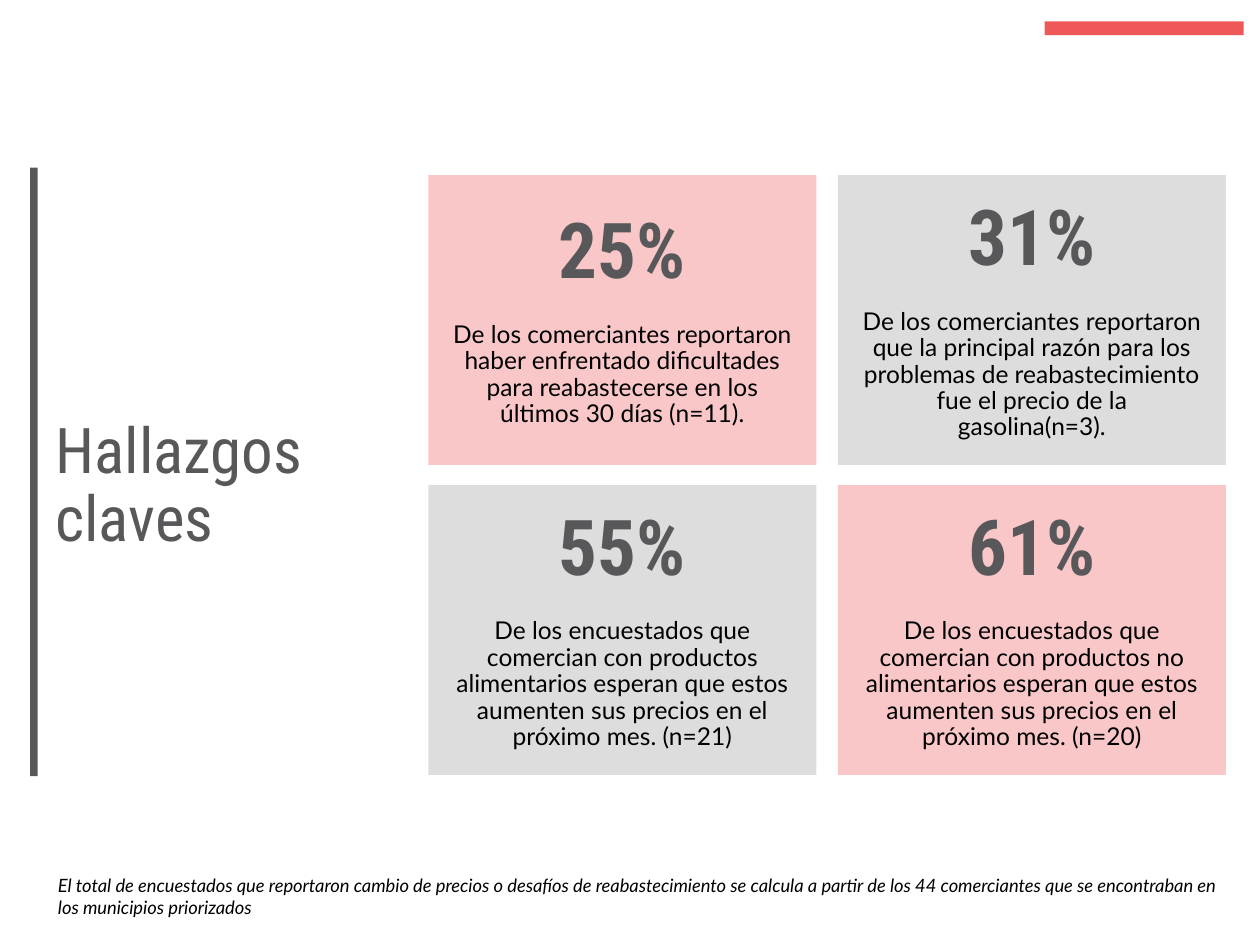
import pptx
import pptx.util
import pptx.dml.color
import pptx.enum.shapes
import pptx.enum.text
import pptx.oxml
import pptx.oxml.ns

Inches = pptx.util.Inches
Pt = pptx.util.Pt
ALIGN = pptx.enum.text.PP_ALIGN
ANCHOR = pptx.enum.text.MSO_ANCHOR

COLORS = {"gray": "58585A", "red": "EE5859", "black": "000000"}
TITLE = {"name": "Roboto Condensed", "size": Pt(36), "bold": False}
NUMBER = {"name": "Roboto Condensed", "size": Pt(44), "bold": True}
BODY = {"name": "Lato", "size": Pt(14), "bold": False}
NOTE = {"name": "Lato", "size": Pt(10.5), "italic": True}

CARDS = [
    ("25%", "De los comerciantes reportaron haber enfrentado dificultades "
            "para reabastecerse en los últimos 30 días (n=11)."),
    ("31%", "De los comerciantes reportaron que la principal razón para los "
            "problemas de reabastecimiento fue el precio de la gasolina(n=3)."),
    ("55%", "De los encuestados que comercian con productos alimentarios "
            "esperan que estos aumenten sus precios en el próximo mes. (n=21)"),
    ("61%", "De los encuestados que comercian con productos no alimentarios "
            "esperan que estos aumenten sus precios en el próximo mes. (n=20)"),
]
FOOTER = ("El total de encuestados que reportaron cambio de precios o desafíos "
          "de reabastecimiento se calcula a partir de los 44 comerciantes que "
          "se encontraban en los municipios priorizados")


def rgb(color):
    return pptx.dml.color.RGBColor.from_string(COLORS[color])


def set_frame(frame, side, top, anchor):
    values = {
        "word_wrap": True,
        "auto_size": pptx.enum.text.MSO_AUTO_SIZE.NONE,
        "vertical_anchor": anchor,
        "margin_left": Inches(side), "margin_right": Inches(side),
        "margin_top": Inches(top), "margin_bottom": Inches(top),
    }
    for key, value in values.items():
        setattr(frame, key, value)


def write(para, text, style, color, **layout):
    """Fill a paragraph with one run; layout holds paragraph settings."""
    for key, value in layout.items():
        setattr(para, key, value)
    run = para.add_run()
    run.text = text
    for key, value in style.items():
        setattr(run.font, key, value)
    run.font.color.rgb = rgb(color)


def add_rect(slide, box, color, alpha=100):
    """Add a plain rectangle; alpha is its opacity in percent."""
    rect = slide.shapes.add_shape(
        pptx.enum.shapes.MSO_SHAPE.RECTANGLE, *map(Inches, box))
    rect.shadow.inherit = False
    rect.line.fill.background()
    rect.fill.solid()
    rect.fill.fore_color.rgb = rgb(color)
    if alpha < 100:
        tint = rect.fill._xPr.find(".//" + pptx.oxml.ns.qn("a:srgbClr"))
        tint.append(pptx.oxml.parse_xml(
            f'<a:alpha {pptx.oxml.ns.nsdecls("a")} val="{alpha * 1000}"/>'))
    return rect


def add_title(slide, text):
    title = slide.shapes.title
    title.left, title.top = Inches(0.37), Inches(3.22)
    title.width, title.height = Inches(2.6), Inches(1.29)
    set_frame(title.text_frame, 0.07, 0.04, ANCHOR.MIDDLE)
    write(title.text_frame.paragraphs[0], text, TITLE, "gray",
          alignment=ALIGN.LEFT, line_spacing=0.9, space_before=Pt(0))


def add_card(slide, box, number, text, color, alpha):
    frame = add_rect(slide, box, color, alpha).text_frame
    set_frame(frame, 0.18, 0.18, ANCHOR.MIDDLE)
    layout = {"alignment": ALIGN.CENTER, "line_spacing": 0.9}
    write(frame.paragraphs[0], number, NUMBER, "gray",
          space_after=Pt(15.4), **layout)
    write(frame.add_paragraph(), text, BODY, "black", **layout)


def add_cards(slide):
    left, top, width, height = 3.4, 1.39, 3.08, 2.3
    gap_x, gap_y = 0.17, 0.16
    for i, (number, text) in enumerate(CARDS):
        row, col = divmod(i, 2)
        box = (left + col * (width + gap_x), top + row * (height + gap_y),
               width, height)
        color, alpha = ("red", 33) if row == col else ("gray", 20)
        add_card(slide, box, number, text, color, alpha)


def add_note(slide, text):
    box = slide.shapes.add_textbox(*map(Inches, (0.39, 6.9, 9.35, 0.47)))
    set_frame(box.text_frame, 0.07, 0.04, ANCHOR.TOP)
    write(box.text_frame.paragraphs[0], text, NOTE, "black")


def main():
    deck = pptx.Presentation()
    deck.slide_width, deck.slide_height = Inches(10), Inches(7.5)
    slide = deck.slides.add_slide(deck.slide_layouts[5])
    add_rect(slide, (0.24, 1.33, 0.06, 4.83), "gray")
    add_rect(slide, (8.29, 0.17, 1.58, 0.11), "red")
    add_title(slide, "Hallazgos claves")
    add_cards(slide)
    add_note(slide, FOOTER)
    deck.save("out.pptx")


if __name__ == "__main__":
    main()
